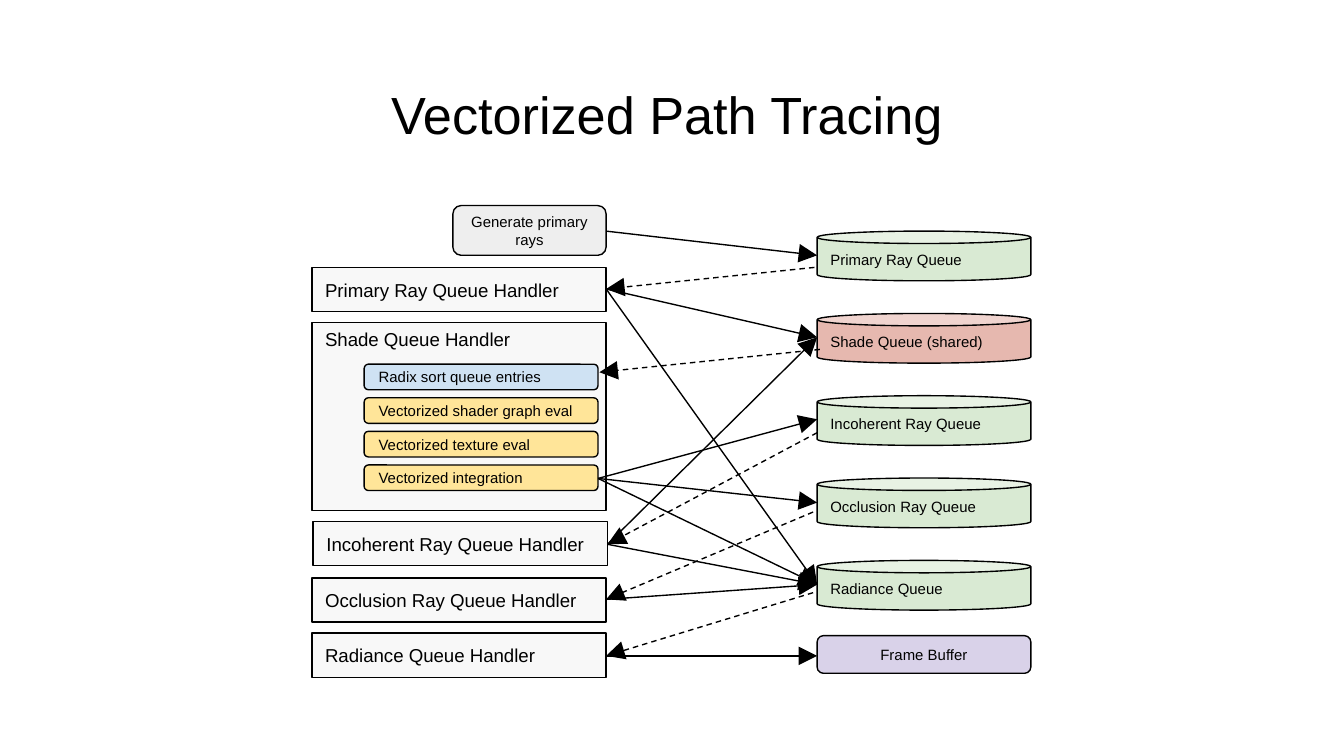
"""Build the Vectorized Path Tracing slide: handlers, queues and the flow between them."""
from lxml import etree
from pptx import Presentation
from pptx.dml.color import RGBColor
from pptx.enum.dml import MSO_LINE
from pptx.enum.shapes import MSO_CONNECTOR, MSO_SHAPE
from pptx.enum.text import MSO_ANCHOR, PP_ALIGN
from pptx.oxml.ns import qn
from pptx.util import Inches, Pt

RECT = MSO_SHAPE.RECTANGLE
ROUND = MSO_SHAPE.ROUNDED_RECTANGLE
CAN = MSO_SHAPE.CAN
STRAIGHT = MSO_CONNECTOR.STRAIGHT
DASH = MSO_LINE.DASH
TOP, MIDDLE = MSO_ANCHOR.TOP, MSO_ANCHOR.MIDDLE
LEFT, CENTER = PP_ALIGN.LEFT, PP_ALIGN.CENTER
BLACK = "000000"


def color(value):
    return RGBColor.from_string(value)


def write(shape, text, size=8, align=LEFT, anchor=MIDDLE, inset=0):
    frame = shape.text_frame
    frame.word_wrap = True
    frame.vertical_anchor = anchor
    frame.margin_left = frame.margin_right = Inches(0.1)
    frame.margin_top = frame.margin_bottom = Inches(inset)
    para = frame.paragraphs[0]
    para.alignment = align
    span = para.add_run()
    span.text = text
    span.font.name = "Arial"
    span.font.size = Pt(size)
    span.font.color.rgb = color(BLACK)


deck = Presentation()
deck.slide_width = Inches(10)
deck.slide_height = Inches(10) * 9 // 16
page = deck.slides.add_slide(deck.slide_layouts[5])

title = page.shapes.title
title.left, title.top = Inches(2.81), Inches(0.51)
title.width, title.height = Inches(4.37), Inches(0.65)
write(title, "Vectorized Path Tracing", size=28, anchor=TOP, inset=0.1)

handlers = [
    ("Primary Ray Queue Handler", 2.32, 1.99, 0.33, {}),
    ("Shade Queue Handler", 2.32, 2.4, 1.4, {"anchor": TOP, "inset": 0.04}),
    ("Incoherent Ray Queue Handler", 2.33, 3.88, 0.33, {}),
    ("Occlusion Ray Queue Handler", 2.32, 4.3, 0.33, {}),
    ("Radiance Queue Handler", 2.32, 4.71, 0.33, {}),
]
stages = [
    ("Radix sort queue entries", "CFE2F3"),
    ("Vectorized shader graph eval", "FFE599"),
    ("Vectorized texture eval", "FFE599"),
    ("Vectorized integration", "FFE599"),
]
queues = [
    ("Primary Ray Queue", "D9EAD3"),
    ("Shade Queue (shared)", "E6B8AF"),
    ("Incoherent Ray Queue", "D9EAD3"),
    ("Occlusion Ray Queue", "D9EAD3"),
    ("Radiance Queue", "D9EAD3"),
]

nodes = [
    (RECT, text, left, top, 2.19, height, "F8F8F8", {"size": 10, **style})
    for text, left, top, height, style in handlers
]
nodes += [
    (ROUND, text, 2.71, 2.71 + 0.25 * row, 1.74, 0.19, fill, {})
    for row, (text, fill) in enumerate(stages)
]
nodes += [
    (CAN, text, 6.08, 1.72 + 2.45 * row / 4, 1.59, 0.37, fill, {})
    for row, (text, fill) in enumerate(queues)
]
nodes += [
    (ROUND, "Generate primary rays", 3.37, 1.53, 1.14, 0.37, "EEEEEE", {"align": CENTER}),
    (ROUND, "Frame Buffer", 6.08, 4.73, 1.59, 0.28, "D9D2E9", {"align": CENTER}),
]
for kind, text, left, top, width, height, fill, style in nodes:
    box = page.shapes.add_shape(kind, Inches(left), Inches(top), Inches(width), Inches(height))
    box.shadow.inherit = False
    box.fill.solid()
    box.fill.fore_color.rgb = color(fill)
    box.line.color.rgb = color(BLACK)
    box.line.width = Pt(0.75)
    write(box, text, **style)

generate = (4.51, 1.72)
primary = (4.51, 2.15)
integration = (4.45, 3.56)
incoherent = (4.52, 4.05)
occlusion = (4.51, 4.46)
radiance = (4.51, 4.88)
shade_queue = (6.08, 2.51)
radiance_queue = (6.08, 4.35)

writes = [
    (generate, (6.08, 1.9)),
    (primary, radiance_queue),
    (primary, shade_queue),
    (integration, (6.08, 3.12)),
    (integration, radiance_queue),
    (incoherent, radiance_queue),
    (integration, (6.08, 3.74)),
    (incoherent, shade_queue),
    (occlusion, radiance_queue),
    (radiance, (6.08, 4.88)),
]
reads = [
    ((6.06, 1.99), primary),
    ((6.1, 2.6), (4.46, 2.77)),
    ((6.05, 4.41), radiance),
    ((6.05, 3.81), occlusion),
    ((6.08, 3.22), incoherent),
]
for flows, dash in ((writes, None), (reads, DASH)):
    for start, end in flows:
        arrow = page.shapes.add_connector(STRAIGHT, *map(Inches, start + end))
        arrow.line.color.rgb = color(BLACK)
        arrow.line.width = Pt(0.75)
        if dash:
            arrow.line.dash_style = dash
        properties = arrow.element.spPr
        outline = properties.find(qn("a:ln"))
        etree.SubElement(outline, qn("a:tailEnd"), type="triangle", w="lg", len="lg")
        etree.SubElement(properties, qn("a:effectLst"))

deck.save("out.pptx")
